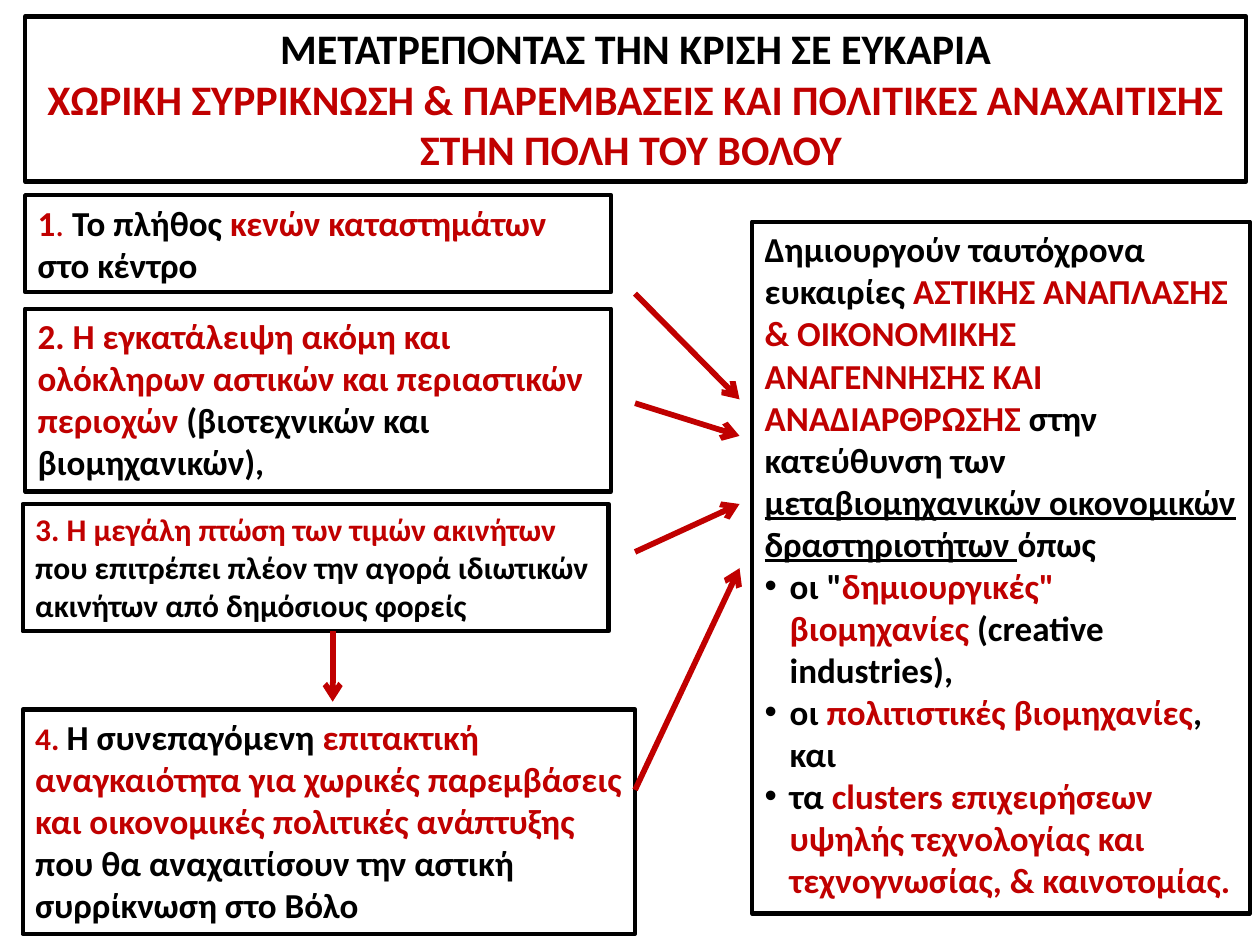
from lxml import etree
from pptx import Presentation
from pptx.dml.color import RGBColor
from pptx.enum.shapes import MSO_CONNECTOR as Connector, MSO_SHAPE as Shape
from pptx.enum.text import MSO_ANCHOR as Anchor, MSO_AUTO_SIZE as AutoSize, PP_ALIGN as Align
from pptx.oxml.ns import qn
from pptx.util import Pt

COLORS = {"black": "000000", "red": "C00000"}
BODY = {"name": "Calibri", "size": Pt(20), "bold": True}
TITLE = {"size": Pt(24)}
SMALL = {"size": Pt(18)}
BULLET_INDENT = Pt(14.4)
ARROW_START, ARROW_END = 362.9, 422.6

TITLE_TEXT = [
    [("ΜΕΤΑΤΡΕΠΟΝΤΑΣ ΤΗΝ ΚΡΙΣΗ ΣΕ ΕΥΚΑΡΙΑ", "black", TITLE)],
    [("ΧΩΡΙΚΗ ΣΥΡΡΙΚΝΩΣΗ & ΠΑΡΕΜΒΑΣΕΙΣ ΚΑΙ ΠΟΛΙΤΙΚΕΣ ΑΝΑΧΑΙΤΙΣΗΣ ΣΤΗΝ ΠΟΛΗ ΤΟΥ ΒΟΛΟΥ ", "red", TITLE)],
]

CAUSES = [
    ((14.4, 111.6, 334.8, 55.4), [
        ("1", "red"),
        (". ", "red", {"bold": False}),
        ("Το πλήθος ", "black"),
        ("κενών καταστημάτων ", "red"),
        ("στο κέντρο", "black"),
    ]),
    ((14.4, 176.4, 334.8, 104.4), [
        ("2. Η εγκατάλειψη ακόμη και ολόκληρων αστικών και περιαστικών περιοχών ", "red"),
        ("(βιοτεχνικών και βιομηχανικών),", "black"),
    ]),
    ((13, 288, 334.8, 72.7), [
        ("3. Η μεγάλη πτώση των τιμών ακινήτων ", "red", SMALL),
        ("που επιτρέπει πλέον την αγορά ιδιωτικών ακινήτων από δημόσιους φορείς", "black", SMALL),
    ]),
    ((13, 405.4, 349.9, 128.2), [
        ("4. ", "red", SMALL),
        ("Η συνεπαγόμενη ", "black"),
        ("επιτακτική αναγκαιότητα για χωρικές παρεμβάσεις και οικονομικές πολιτικές ανάπτυξης ", "red"),
        ("που θα αναχαιτίσουν την αστική συρρίκνωση στο Βόλο", "black"),
    ]),
]

OPPORTUNITIES = [
    ("Δημιουργούν ταυτόχρονα ευκαιρίες ", "black"),
    ("ΑΣΤΙΚΗΣ ΑΝΑΠΛΑΣΗΣ & ΟΙΚΟΝΟΜΙΚΗΣ ΑΝΑΓΕΝΝΗΣΗΣ ΚΑΙ ΑΝΑΔΙΑΡΘΡΩΣΗΣ ", "red"),
    ("στην κατεύθυνση των ", "black"),
    ("μεταβιομηχανικών οικονομικών δραστηριοτήτων ", "black", {"underline": True}),
    ("όπως", "black"),
]
ACTIVITIES = [
    [("οι \"", "black"), ("δημιουργικές\" βιομηχανίες ", "red"), ("(creative industries),", "black")],
    [("οι ", "black"), ("πολιτιστικές βιομηχανίες", "red"), (", και", "black")],
    [("τα ", "black"),
     ("clusters επιχειρήσεων υψηλής τεχνολογίας και τεχνογνωσίας, & καινοτομίας.", "red")],
]

ARROW_HEIGHTS = [(167.8, 228.2), (230.4, 249.1), (315.4, 288), (451.4, 324.7)]


def add_bullet(para):
    props = para._p.get_or_add_pPr()
    props.set("marL", str(BULLET_INDENT))
    props.set("indent", str(-BULLET_INDENT))
    etree.SubElement(props, qn("a:buFont")).set("typeface", "Arial")
    etree.SubElement(props, qn("a:buChar")).set("char", "•")


def fill_paragraph(para, spans, align):
    para.alignment = align
    for text, color, *changes in spans:
        span = para.add_run()
        span.text = text
        span.font.color.rgb = RGBColor.from_string(COLORS[color])
        for key, value in {**BODY, **(changes[0] if changes else {})}.items():
            setattr(span.font, key, value)


def add_box(page, place, paragraphs, align=Align.LEFT, bullets_from=None):
    box = page.shapes.add_shape(Shape.RECTANGLE, *map(Pt, place))
    box.shadow.inherit = False
    box.fill.background()
    box.line.color.rgb = RGBColor.from_string(COLORS["black"])
    box.line.width = Pt(2.5)
    frame = box.text_frame
    settings = {"word_wrap": True, "auto_size": AutoSize.SHAPE_TO_FIT_TEXT,
                "vertical_anchor": Anchor.TOP}
    for key, value in settings.items():
        setattr(frame, key, value)
    for index, spans in enumerate(paragraphs):
        para = frame.add_paragraph() if index else frame.paragraphs[0]
        if bullets_from is not None and index >= bullets_from:
            add_bullet(para)
        fill_paragraph(para, spans, align)


def add_arrow(page, *ends):
    arrow = page.shapes.add_connector(Connector.STRAIGHT, *map(Pt, ends))
    arrow.line.color.rgb = RGBColor.from_string(COLORS["red"])
    arrow.line.width = Pt(3.25)
    etree.SubElement(arrow.line._get_or_add_ln(), qn("a:tailEnd")).set("type", "arrow")
    etree.SubElement(arrow._element.spPr, qn("a:effectLst"))


def main():
    deck = Presentation()
    deck.slide_width, deck.slide_height = Pt(720), Pt(540)
    page = deck.slides.add_slide(deck.slide_layouts[6])
    add_box(page, (429.8, 126.7, 284.4, 395.3), [OPPORTUNITIES, *ACTIVITIES], bullets_from=1)
    add_box(page, (14.4, 9.4, 697.7, 94.3), TITLE_TEXT, Align.CENTER)
    for place, spans in CAUSES:
        add_box(page, place, [spans])
    for start, end in ARROW_HEIGHTS:
        add_arrow(page, ARROW_START, start, ARROW_END, end)
    add_arrow(page, 190.1, 360.7, 190.1, 401)
    deck.save("out.pptx")


if __name__ == "__main__":
    main()
